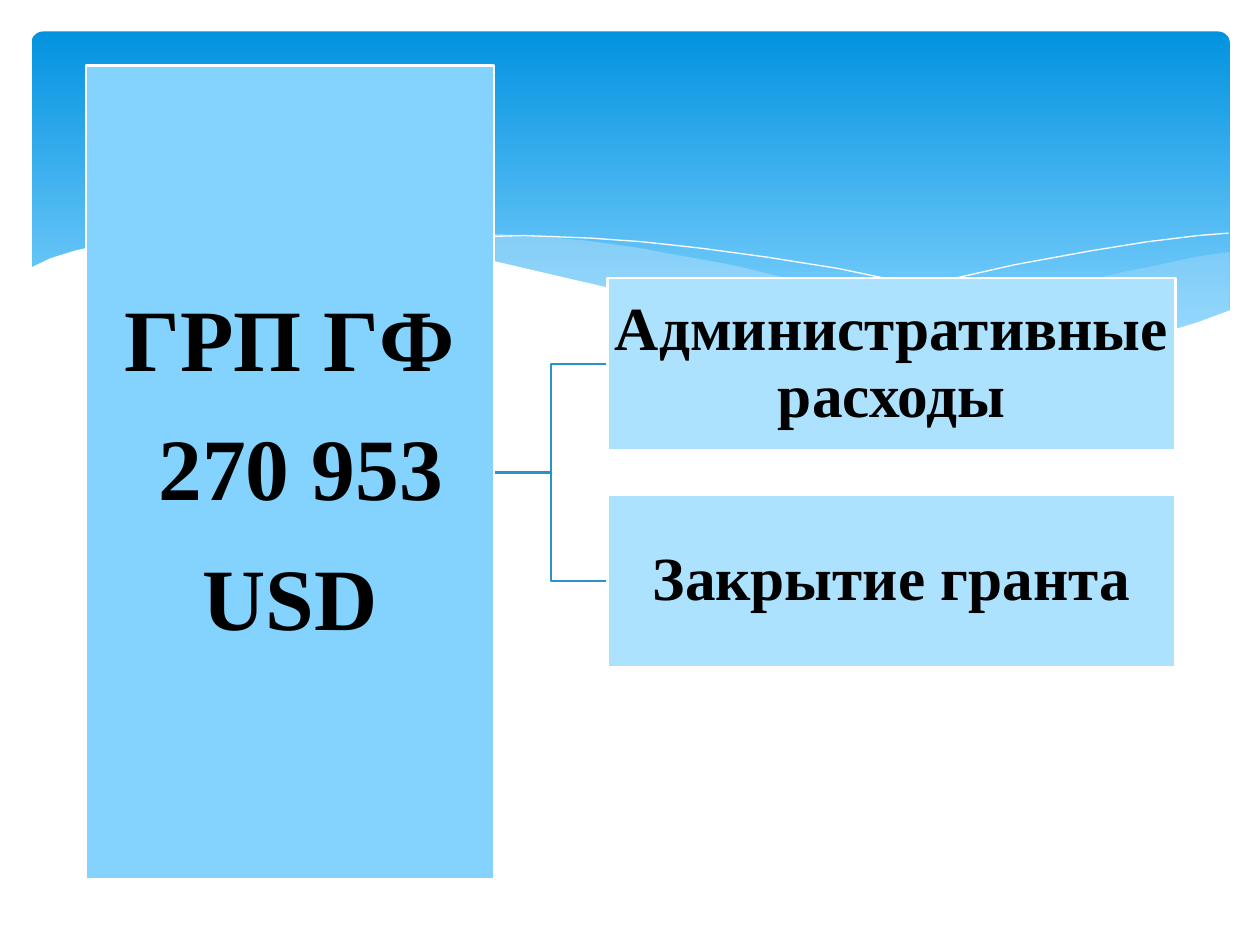
"""Build a slide that splits a grant budget into its two expense branches."""
from dataclasses import dataclass

from lxml.etree import SubElement
from pptx import Presentation
from pptx.dml.color import RGBColor
from pptx.enum.shapes import MSO_CONNECTOR, MSO_SHAPE
from pptx.enum.text import MSO_ANCHOR, PP_ALIGN
from pptx.oxml.ns import qn
from pptx.util import Pt

TOTAL = ["ГРП ГФ", " 270 953", "USD"]
BRANCHES = ["Административные расходы", "Закрытие гранта"]

RIGHT_WAVE = [
    (702, 144), (682.6, 146.9), (663.1, 151.2), (641.5, 155.5), (619.9, 160.6),
    (579.6, 170.6), (542.2, 178.6), (508.3, 185), (475.9, 190.8), (497.5, 193.7),
    (527, 197.3), (553.7, 199.4), (586.1, 200.2), (614.9, 198.7), (640.1, 195.8),
    (663.1, 190.8), (683.3, 185), (702.7, 177.8), (702.7, 144),
]
MIDDLE_WAVE = [
    (643, 196.6), (602.6, 190.8), (558, 182.9), (508.3, 172.8), (452.9, 159.8),
    (420.5, 151.9), (389.5, 146.2), (361.4, 141.1), (334.8, 137.5), (302.4, 134.6),
    (273.6, 133.2), (247.7, 133.9), (225.4, 135.4), (205.9, 137.5), (232.6, 141.1),
    (260.6, 146.2), (290.9, 151.9), (323.3, 159.8), (381.6, 172.8), (432.7, 183.6),
    (478.8, 191.5), (519.8, 197.3), (556.6, 199.4), (589, 200.2), (617, 199.4),
]
FALLING_LINE = [
    (222.5, 140.4), (247.7, 136.8), (269.3, 135.4), (299.5, 134.6), (337.7, 136.1),
    (367.2, 138.2), (400.3, 141.8), (437.8, 146.9), (478.8, 153.4), (523.4, 162.7),
    (572.4, 173.5), (625.7, 187.9), (653, 195.8),
]
RISING_LINE = [
    (441.4, 185), (470.2, 177.1), (500.4, 169.2), (538.6, 160.6), (580.3, 151.2),
    (623.5, 143.3), (655.2, 138.2), (684.7, 134.6), (702, 133.2),
]
WHITE_WAVE = [
    (703.4, 177.1), (684, 184.3), (662.4, 190.8), (638.6, 195.1), (612, 198),
    (582.5, 199.4), (547.9, 198), (509.8, 194.4), (466.6, 188.6), (416.9, 180),
    (362.2, 167.8), (321.8, 158.4), (281.5, 149), (244.8, 141.8), (210.2, 136.8),
    (180, 133.9), (151.9, 132.5), (115.9, 132.5), (85.7, 134.6), (61.2, 139),
    (42.5, 143.3), (28.8, 147.6), (16.6, 153.4), (16.6, 236.9), (703.4, 236.9),
]


@dataclass(frozen=True)
class Theme:
    font: str = "Times New Roman"
    total_size: float = 50
    branch_size: float = 35
    line_width: float = 1.25
    text: str = "000000"
    white: str = "FFFFFF"
    banner_top: str = "0293E0"
    sky: str = "83D3FE"
    branch: str = "ADE2FE"
    wave: str = "C6E7FC"
    link: str = "2792CB"


THEME = Theme()
MIDDLE = 270
TOTAL_FRAME = (49, 37.4, 233.2, 465.2)
BRANCH_LEFT, BRANCH_WIDTH, BRANCH_HEIGHT, BRANCH_GAP = 347.2, 324.6, 98.6, 25.2


def color(value):
    return RGBColor.from_string(value)


def paint(shape, fill=None, opacity=100, line=None, width=0):
    shape.shadow.inherit = False
    if fill:
        shape.fill.solid()
        shape.fill.fore_color.rgb = color(fill)
        if opacity < 100:
            tint = shape.fill._xPr.find(qn("a:solidFill"))[0]
            SubElement(tint, qn("a:alpha"), val=str(opacity * 1000))
    else:
        shape.fill.background()
    if line:
        shape.line.color.rgb = color(line)
        shape.line.width = Pt(width)
    else:
        shape.line.fill.background()


def add_outline(page, points, closed=True, **style):
    start, *rest = [(Pt(x), Pt(y)) for x, y in points]
    builder = page.shapes.build_freeform(*start)
    builder.add_line_segments(rest, close=closed)
    paint(builder.convert_to_shape(), **style)


def add_banner(page):
    banner = page.shapes.add_shape(
        MSO_SHAPE.ROUNDED_RECTANGLE, Pt(18), Pt(18), Pt(684.7), Pt(194.4))
    banner.adjustments[0] = 0.034
    paint(banner)
    banner.fill.gradient()
    banner.fill.gradient_angle = 270
    stops = zip(banner.fill.gradient_stops, (0, 0.9), (THEME.banner_top, THEME.sky))
    for stop, position, value in stops:
        stop.position = position
        stop.color.rgb = color(value)


def add_box(page, frame, lines, fill, size, inset):
    box = page.shapes.add_shape(MSO_SHAPE.RECTANGLE, *map(Pt, frame))
    paint(box, fill, line=THEME.white, width=THEME.line_width)
    text = box.text_frame
    text.word_wrap = True
    text.vertical_anchor = MSO_ANCHOR.MIDDLE
    text.margin_left = text.margin_right = Pt(inset)
    text.margin_top = text.margin_bottom = Pt(inset)
    text.text = "\n".join(lines)
    for para in text.paragraphs:
        para.alignment = PP_ALIGN.CENTER
        para.line_spacing = 0.9
        para.space_after = Pt(round(size * 0.4))
        para.font.name = THEME.font
        para.font.size = Pt(size)
        para.font.bold = True
        para.font.color.rgb = color(THEME.text)


def add_link(page, start, end):
    link = page.shapes.add_connector(MSO_CONNECTOR.ELBOW, *map(Pt, (*start, *end)))
    link.line.color.rgb = color(THEME.link)
    link.line.width = Pt(THEME.line_width)
    SubElement(link._element.spPr, qn("a:effectLst"))


def main():
    deck = Presentation()
    deck.slide_width, deck.slide_height = Pt(720), Pt(540)
    page = deck.slides.add_slide(deck.slide_layouts[6])

    add_banner(page)
    add_outline(page, RIGHT_WAVE, fill=THEME.wave, opacity=29)
    add_outline(page, MIDDLE_WAVE, fill=THEME.wave, opacity=40)
    for points in (FALLING_LINE, RISING_LINE):
        add_outline(page, points, closed=False, line=THEME.white)
    add_outline(page, WHITE_WAVE, fill=THEME.white)

    pitch = BRANCH_HEIGHT + BRANCH_GAP
    centers = [MIDDLE + (index - (len(BRANCHES) - 1) / 2) * pitch
               for index in range(len(BRANCHES))]
    total_right = TOTAL_FRAME[0] + TOTAL_FRAME[2]
    for center in centers:
        add_link(page, (total_right, MIDDLE), (BRANCH_LEFT, center))
    add_box(page, TOTAL_FRAME, TOTAL, THEME.sky, THEME.total_size, 2.2)
    for label, center in zip(BRANCHES, centers):
        frame = (BRANCH_LEFT, center - BRANCH_HEIGHT / 2, BRANCH_WIDTH, BRANCH_HEIGHT)
        add_box(page, frame, [label], THEME.branch, THEME.branch_size, 1.4)

    deck.save("out.pptx")


if __name__ == "__main__":
    main()
